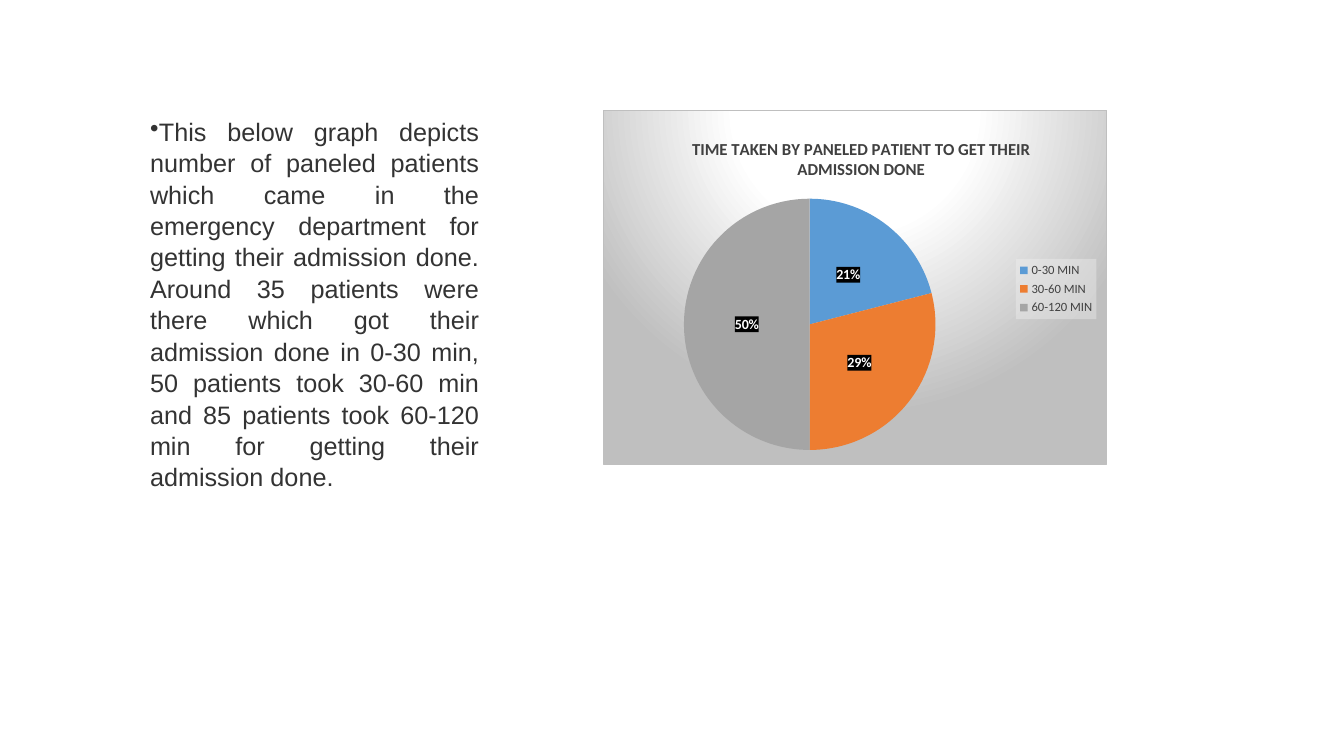
from lxml import etree
from pptx import Presentation
from pptx.chart.data import CategoryChartData
from pptx.dml.color import RGBColor
from pptx.enum.chart import XL_CHART_TYPE, XL_LABEL_POSITION, XL_LEGEND_POSITION
from pptx.enum.text import MSO_ANCHOR, PP_ALIGN
from pptx.oxml import parse_xml
from pptx.oxml.ns import nsdecls, qn
from pptx.util import Inches, Pt

PIE = XL_CHART_TYPE.PIE
CENTER = XL_LABEL_POSITION.CENTER
RIGHT = XL_LEGEND_POSITION.RIGHT
TOP = MSO_ANCHOR.TOP
JUSTIFY = PP_ALIGN.JUSTIFY

COLORS = {
    "body": "333333",
    "dark": "404040",
    "black": "000000",
    "white": "FFFFFF",
    "silver": "BFBFBF",
    "legend": "F2F2F2",
}
ADMISSIONS = [
    ("0-30 MIN", 21, "5B9BD5"),
    ("30-60 MIN", 29, "ED7D31"),
    ("60-120 MIN", 50, "A5A5A5"),
]
TITLE = "TIME TAKEN BY PANELED PATIENT TO GET THEIR ADMISSION DONE"
BODY = (
    "This below graph depicts number of paneled patients which came in the "
    "emergency department for getting their admission done. Around 35 patients "
    "were there which got their admission done in 0-30 min, 50 patients took "
    "30-60 min and 85 patients took 60-120 min for getting their admission done."
)


def format_font(font, color, **values):
    for name, value in values.items():
        setattr(font, name, value)
    font.color.rgb = RGBColor.from_string(COLORS[color])


def add_body(page, text, left, top, width, height):
    box = page.shapes.add_textbox(*map(Inches, (left, top, width, height)))
    frame = box.text_frame
    frame.word_wrap = True
    frame.vertical_anchor = TOP
    para = frame.paragraphs[0]
    para.alignment = JUSTIFY
    para.line_spacing = 1.04
    span = para.add_run()
    span.text = text
    format_font(span.font, "body", name="Arial", size=Pt(18))
    bullet = etree.SubElement(para._p.get_or_add_pPr(), qn("a:buChar"))
    bullet.set("char", "•")


def place_part(part, index, **fractions):
    """Fix a chart part's place, in fractions of the chart's size."""
    for old in part.findall(qn("c:layout")):
        part.remove(old)
    layout = etree.Element(qn("c:layout"))
    manual = etree.SubElement(layout, qn("c:manualLayout"))
    if part.tag == qn("c:plotArea"):
        etree.SubElement(manual, qn("c:layoutTarget")).set("val", "inner")
    for name in ("x", "y"):
        etree.SubElement(manual, qn(f"c:{name}Mode")).set("val", "edge")
    for name, value in fractions.items():
        etree.SubElement(manual, qn(f"c:{name}")).set("val", str(value))
    part.insert(index, layout)


def paint_part(part, fill):
    """Put shape properties ahead of a chart part's text properties."""
    properties = parse_xml(f'<c:spPr {nsdecls("c", "a")}>{fill}</c:spPr>')
    part.find(qn("c:txPr")).addprevious(properties)


def translucent(color, percent):
    return (
        f'<a:solidFill><a:srgbClr val="{COLORS[color]}">'
        f'<a:alpha val="{percent * 1000}"/></a:srgbClr></a:solidFill>'
    )


def chart_background():
    stops = "".join(
        f'<a:gs pos="{percent * 1000}"><a:srgbClr val="{COLORS[color]}"/></a:gs>'
        for percent, color in ((0, "white"), (39, "white"), (100, "silver"))
    )
    return (
        f'<a:gradFill><a:gsLst>{stops}</a:gsLst><a:path path="circle">'
        '<a:fillToRect l="50000" t="-80000" r="50000" b="180000"/></a:path></a:gradFill>'
        f'<a:ln w="{Pt(0.75)}"><a:solidFill><a:srgbClr val="{COLORS["silver"]}"/>'
        "</a:solidFill></a:ln>"
    )


def add_title(chart, text):
    frame = chart.chart_title.text_frame
    frame.text = text
    format_font(frame.paragraphs[0].runs[0].font, "dark",
                name="Calibri", size=Pt(12), bold=True)
    place_part(chart.chart_title._element, 1, x=0.17, y=0.07)


def add_legend(chart):
    chart.has_legend = True
    legend = chart.legend
    legend.position = RIGHT
    legend.include_in_layout = False
    format_font(legend.font, "dark", name="Calibri", size=Pt(9))
    place_part(legend._element, 1, x=0.82, y=0.42, w=0.16, h=0.17)
    paint_part(legend._element, translucent("legend", 39))


def add_labels(plot):
    plot.has_data_labels = True
    labels = plot.data_labels
    values = {
        "show_percentage": True,
        "show_value": False,
        "number_format": "0%",
        "number_format_is_linked": False,
        "position": CENTER,
    }
    for name, value in values.items():
        setattr(labels, name, value)
    format_font(labels.font, "white", name="Calibri", size=Pt(10), bold=True)
    paint_part(labels._element, translucent("black", 70))


def add_pie(page, left, top, width, height):
    data = CategoryChartData()
    data.categories = [name for name, _, _ in ADMISSIONS]
    data.add_series("Series 1", [value for _, value, _ in ADMISSIONS])
    chart = page.shapes.add_chart(
        PIE, *map(Inches, (left, top, width, height)), data).chart
    format_font(chart.font, "black", name="Calibri", size=Pt(10))
    paint_part(chart._chartSpace, chart_background())
    add_title(chart, TITLE)
    add_legend(chart)
    plot = chart.plots[0]
    plot.vary_by_categories = True
    for index, (_, _, color) in enumerate(ADMISSIONS):
        fill = plot.series[0].points[index].format.fill
        fill.solid()
        fill.fore_color.rgb = RGBColor.from_string(color)
    add_labels(plot)
    plot_area = chart._chartSpace.find(".//" + qn("c:plotArea"))
    place_part(plot_area, 0, x=0.16, y=0.245, w=0.5, h=0.72)


def main():
    deck = Presentation()
    deck.slide_width = Inches(13.33)
    deck.slide_height = Inches(7.5)
    page = deck.slides.add_slide(deck.slide_layouts[6])
    add_body(page, BODY, 1.39, 1.09, 3.46, 4.04)
    add_pie(page, 5.98, 1.09, 5, 3.52)
    deck.save("out.pptx")


if __name__ == "__main__":
    main()
